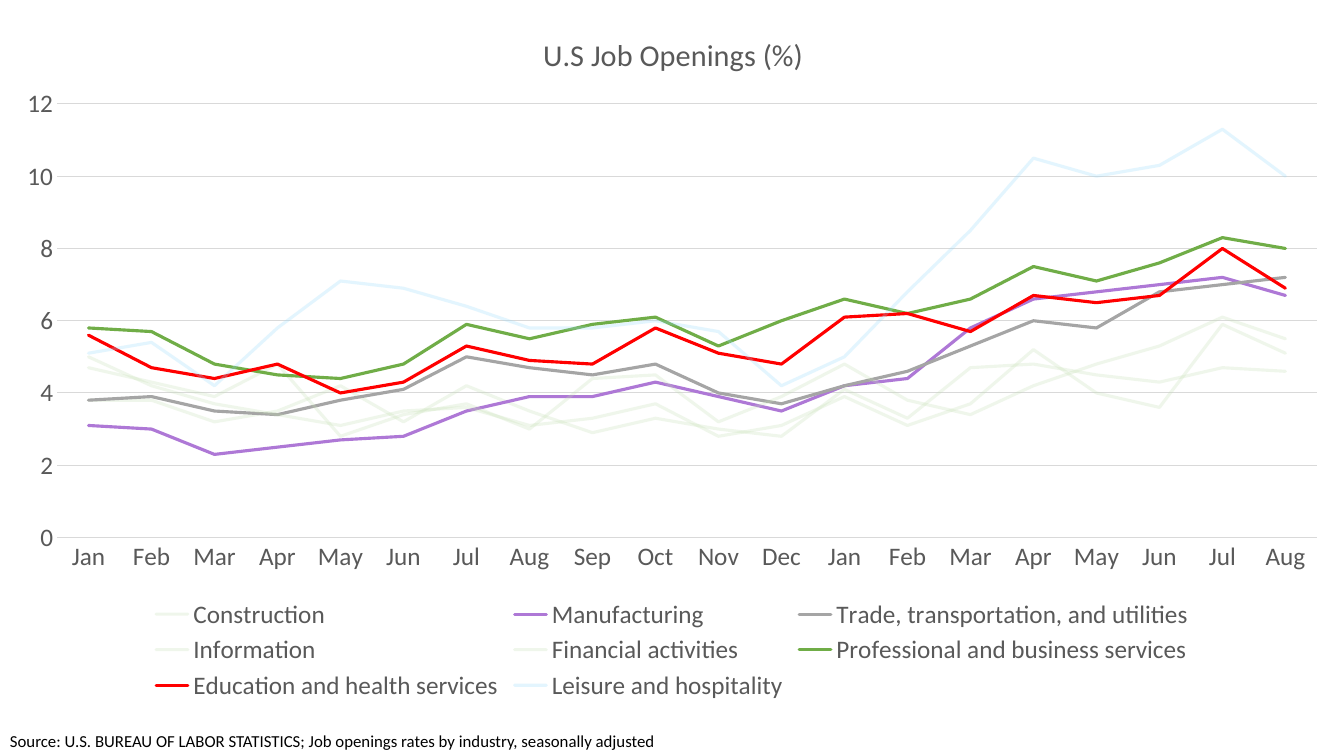
from dataclasses import dataclass

from lxml.etree import SubElement
from pptx import Presentation
from pptx.chart.data import CategoryChartData
from pptx.dml.color import RGBColor
from pptx.enum.chart import XL_CHART_TYPE, XL_LEGEND_POSITION, XL_TICK_MARK
from pptx.enum.text import MSO_ANCHOR
from pptx.oxml.ns import qn
from pptx.util import Inches, Pt


@dataclass(frozen=True)
class Theme:
    font: str = "Calibri"
    ink: str = "000000"
    text: str = "595959"
    grid: str = "D9D9D9"
    paper: str = "FFFFFF"
    pale_green: str = "C5E0B4"
    purple: str = "AE78D6"
    gray: str = "A5A5A5"
    green: str = "70AD47"
    red: str = "FF0000"
    pale_blue: str = "94DAFE"
    title_size: float = 21.6
    label_size: int = 18
    source_size: int = 12


theme = Theme()


def style_font(font, size, color):
    font.name = theme.font
    font.size = Pt(size)
    font.bold = False
    font.color.rgb = RGBColor.from_string(color)


def place(element, index, **fractions):
    """Pin a chart part at fractions of the chart's size."""
    layout = element.find(qn("c:layout"))
    if layout is None:
        layout = element.makeelement(qn("c:layout"))
        element.insert(index, layout)
    manual = SubElement(layout, qn("c:manualLayout"))
    if "w" in fractions:
        SubElement(manual, qn("c:layoutTarget")).set("val", "inner")
    for mode in ("xMode", "yMode"):
        SubElement(manual, qn(f"c:{mode}")).set("val", "edge")
    for name, value in fractions.items():
        SubElement(manual, qn(f"c:{name}")).set("val", str(value))


# Data: name, colour, faded, monthly rates
months = "Jan Feb Mar Apr May Jun Jul Aug Sep Oct Nov Dec".split()
industries = [
    ("Construction", theme.pale_green, True,
     [3.8, 3.8, 3.2, 3.5, 4.2, 3.2, 4.2, 3.5, 2.9, 3.3,
      3, 2.8, 4.1, 3.3, 4.7, 4.8, 4.5, 4.3, 4.7, 4.6]),
    ("Manufacturing", theme.purple, False,
     [3.1, 3, 2.3, 2.5, 2.7, 2.8, 3.5, 3.9, 3.9, 4.3,
      3.9, 3.5, 4.2, 4.4, 5.8, 6.6, 6.8, 7, 7.2, 6.7]),
    ("Trade, transportation, and utilities", theme.gray, False,
     [3.8, 3.9, 3.5, 3.4, 3.8, 4.1, 5, 4.7, 4.5, 4.8,
      4, 3.7, 4.2, 4.6, 5.3, 6, 5.8, 6.8, 7, 7.2]),
    ("Information", theme.pale_green, True,
     [4.7, 4.3, 3.9, 4.8, 2.8, 3.4, 3.7, 3, 4.4, 4.5,
      3.2, 3.9, 4.8, 3.8, 3.4, 4.2, 4.8, 5.3, 6.1, 5.5]),
    ("Financial activities", theme.pale_green, True,
     [5, 4.2, 3.7, 3.4, 3.1, 3.5, 3.6, 3.1, 3.3, 3.7,
      2.8, 3.1, 3.9, 3.1, 3.7, 5.2, 4, 3.6, 5.9, 5.1]),
    ("Professional and business services", theme.green, False,
     [5.8, 5.7, 4.8, 4.5, 4.4, 4.8, 5.9, 5.5, 5.9, 6.1,
      5.3, 6, 6.6, 6.2, 6.6, 7.5, 7.1, 7.6, 8.3, 8]),
    ("Education and health services", theme.red, False,
     [5.6, 4.7, 4.4, 4.8, 4, 4.3, 5.3, 4.9, 4.8, 5.8,
      5.1, 4.8, 6.1, 6.2, 5.7, 6.7, 6.5, 6.7, 8, 6.9]),
    ("Leisure and hospitality", theme.pale_blue, True,
     [5.1, 5.4, 4.2, 5.8, 7.1, 6.9, 6.4, 5.8, 5.8, 6,
      5.7, 4.2, 5, 6.8, 8.5, 10.5, 10, 10.3, 11.3, 10]),
]

deck = Presentation()
deck.slide_width, deck.slide_height = Inches(13.33), Inches(7.5)
page = deck.slides.add_slide(deck.slide_layouts[6])

# Source line
box = page.shapes.add_textbox(Inches(0), Inches(7), Inches(11.62), Inches(0.5))
box.fill.solid()
box.fill.fore_color.rgb = RGBColor.from_string(theme.paper)
frame = box.text_frame
frame.word_wrap = True
frame.vertical_anchor = MSO_ANCHOR.BOTTOM
para = frame.paragraphs[0]
para.text = ("Source: U.S. BUREAU OF LABOR STATISTICS; "
             "Job openings rates by industry, seasonally adjusted")
style_font(para.font, theme.source_size, theme.ink)

# Line chart
data = CategoryChartData()
data.categories = months + months[:8]
for name, color, faded, rates in industries:
    data.add_series(name, rates)
chart = page.shapes.add_chart(XL_CHART_TYPE.LINE, Inches(0), Inches(0),
                              Inches(13.33), Inches(7), data).chart
style_font(chart.font, theme.label_size, theme.text)

for series, (name, color, faded, rates) in zip(chart.plots[0].series, industries):
    series.smooth = False
    line = series.format.line
    line.width = Pt(2.25)
    line.color.rgb = RGBColor.from_string(color)
    outline = series.format.line._get_or_add_ln()
    outline.set("cap", "rnd")
    if faded:
        SubElement(outline.find(".//" + qn("a:srgbClr")), qn("a:alpha")).set("val", "25000")

# Title
chart.has_title = True
title = chart.chart_title
title.include_in_layout = False
para = title.text_frame.paragraphs[0]
para.text = "U.S Job Openings (%)"
style_font(para.font, theme.title_size, theme.text)
place(title._element, 1, x=0.4, y=0.04)

# Axes and gridlines
value_axis, month_axis = chart.value_axis, chart.category_axis
for axis in (value_axis, month_axis):
    axis.major_tick_mark = axis.minor_tick_mark = XL_TICK_MARK.NONE
    style_font(axis.tick_labels.font, theme.label_size, theme.text)
value_axis.minimum_scale, value_axis.maximum_scale = 0, 12
value_axis.major_unit = 2
value_axis.has_major_gridlines = True
value_axis.format.line.fill.background()
for line in (value_axis.major_gridlines.format.line, month_axis.format.line):
    line.width = Pt(0.75)
    line.color.rgb = RGBColor.from_string(theme.grid)
place(chart._chartSpace.find(".//" + qn("c:plotArea")), 0,
      x=0.0424, y=0.1475, w=0.9375, h=0.6145)

# Legend
chart.has_legend = True
chart.legend.position = XL_LEGEND_POSITION.BOTTOM
chart.legend.include_in_layout = False
style_font(chart.legend.font, theme.label_size, theme.text)

deck.save("out.pptx")
